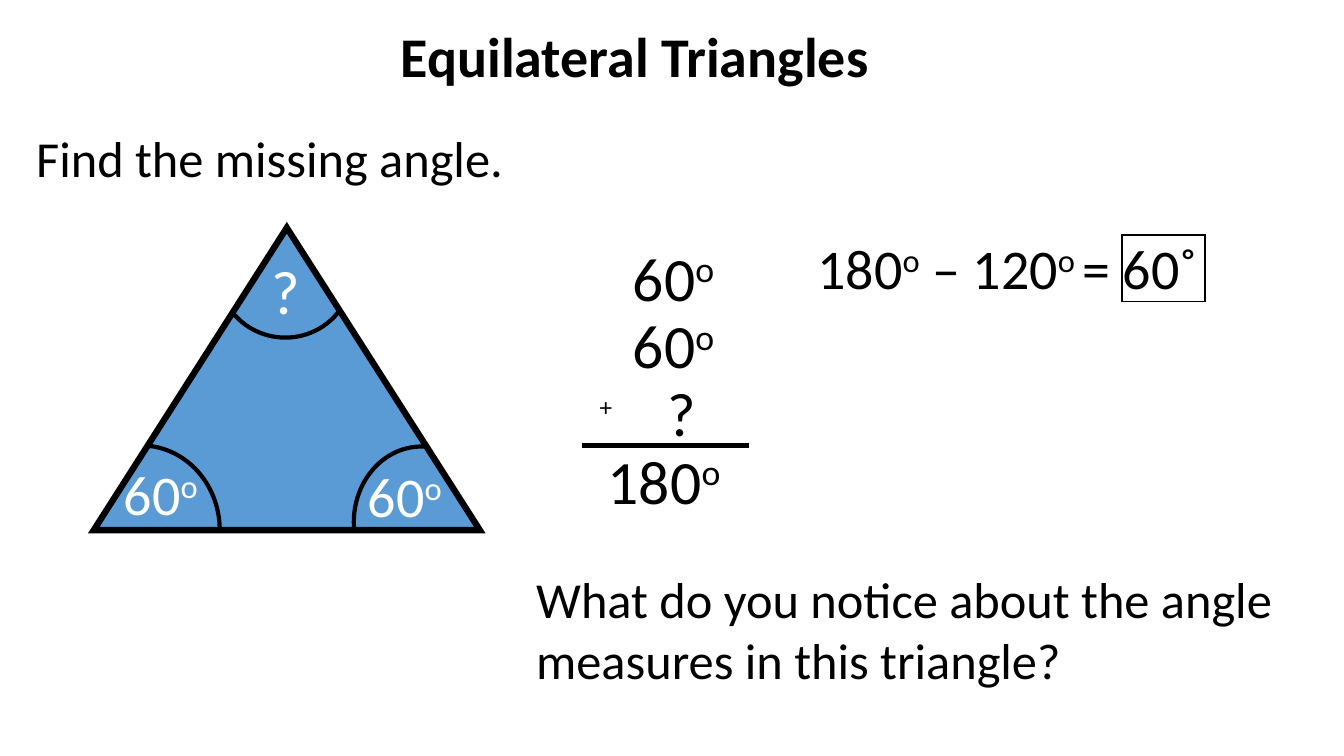
from math import cos, radians, sin

from lxml import etree
from pptx import Presentation
from pptx.dml.color import RGBColor
from pptx.enum.shapes import MSO_CONNECTOR as Connector, MSO_SHAPE as Shape
from pptx.enum.text import MSO_ANCHOR as Anchor, PP_ALIGN as Align
from pptx.oxml.ns import qn
from pptx.util import Inches, Pt

BLACK = RGBColor(0x00, 0x00, 0x00)
WHITE = RGBColor(0xFF, 0xFF, 0xFF)
BLUE = RGBColor(0x5B, 0x9B, 0xD5)
FONT = "Calibri"
DEGREE = ("o", True)
ARC_STEPS = 40


def add_run(paragraph, text, size, color=BLACK, bold=False, raised=False):
    run = paragraph.add_run()
    run.text = text
    run.font.name = FONT
    run.font.size = Pt(size)
    run.font.bold = bold
    run.font.color.rgb = color
    if raised:
        run._r.get_or_add_rPr().set("baseline", "30000")


def add_text(slide, box, size, *parts, color=BLACK, align=Align.LEFT, wrap=True):
    """Add a text box; each part is a (text, raised) pair."""
    text_box = slide.shapes.add_textbox(*map(Inches, box))
    text_box.text_frame.word_wrap = wrap
    paragraph = text_box.text_frame.paragraphs[0]
    paragraph.alignment = align
    for text, raised in parts:
        add_run(paragraph, text, size, color, raised=raised)


def format_outline(shape, width, fill=None):
    shape.shadow.inherit = False
    if fill is None:
        shape.fill.background()
    else:
        shape.fill.solid()
        shape.fill.fore_color.rgb = fill
    shape.line.color.rgb = BLACK
    shape.line.width = Pt(width)
    miter = etree.SubElement(shape.line._get_or_add_ln(), qn("a:miter"))
    miter.set("lim", "800000")


def add_outlined(slide, kind, box, width, fill=None):
    shape = slide.shapes.add_shape(kind, *map(Inches, box))
    format_outline(shape, width, fill)


def add_angle_arc(slide, center, radii, start, end):
    """Draw a clockwise arc; angles are in degrees from the right."""
    (x, y), (rx, ry) = center, radii
    angles = [radians(start + (end - start) * step / ARC_STEPS)
              for step in range(ARC_STEPS + 1)]
    points = [(Inches(x + rx * cos(angle)), Inches(y + ry * sin(angle)))
              for angle in angles]
    builder = slide.shapes.build_freeform(*points[0])
    builder.add_line_segments(points[1:], close=False)
    format_outline(builder.convert_to_shape(), 3)


def add_sum_line(slide, left, right, y):
    line = slide.shapes.add_connector(
        Connector.STRAIGHT, Inches(left), Inches(y), Inches(right), Inches(y))
    line.line.color.rgb = BLACK
    line.line.width = Pt(3)
    etree.SubElement(line._element.spPr, qn("a:effectLst"))


def format_title(slide):
    title = slide.shapes.title
    title.left, title.top, title.width, title.height = map(
        Inches, (1.67, 0, 9.25, 1.17))
    title.text_frame.vertical_anchor = Anchor.MIDDLE
    paragraph = title.text_frame.paragraphs[0]
    paragraph.alignment = Align.CENTER
    paragraph.line_spacing = 0.9
    add_run(paragraph, "Equilateral Triangles", 40, bold=True)


def add_triangle(slide):
    add_outlined(slide, Shape.ISOSCELES_TRIANGLE, (0.93, 2.26, 3.83, 3), 4.5, BLUE)
    add_angle_arc(slide, (1.4, 5.26), (0.78, 0.84), 276, 360)
    add_angle_arc(slide, (4.18, 5.18), (0.67, 0.75), 175, 275)
    add_angle_arc(slide, (2.83, 2.71), (0.66, 0.64), 34, 143)
    for left, top in ((1.13, 4.51), (3.55, 4.53)):
        add_text(slide, (left, top, 1.15, 0.77), 40, ("60", False), DEGREE,
                 color=WHITE)
    add_text(slide, (2.59, 2.46, 1, 0.83), 44, ("?", False), color=WHITE)


def add_angle_sum(slide):
    rows = (
        (6.18, 1.04, ("60", False), DEGREE),
        (6.18, 1.04, ("60", False), DEGREE),
        (6.52, 0.49, ("?", False)),
        (5.93, 1.36, ("180", False), DEGREE),
    )
    for index, (left, width, *parts) in enumerate(rows):
        add_text(slide, (left, 2.33 + index * 0.67, width, 0.84), 44, *parts,
                 wrap=False)
    add_text(slide, (5.85, 3.83, 0.33, 0.4), 18, ("+", False), wrap=False)
    add_sum_line(slide, 5.77, 7.43, 4.42)


def main():
    presentation = Presentation()
    presentation.slide_width = Inches(13.33)
    presentation.slide_height = Inches(7.5)
    slide = presentation.slides.add_slide(presentation.slide_layouts[5])

    # Title and task
    format_title(slide)
    add_text(slide, (-1.22, 1.21, 7.79, 0.71), 36,
             ("Find the missing angle.", False), align=Align.CENTER)

    # Triangle and the sum of its angles
    add_triangle(slide)
    add_angle_sum(slide)

    # Boxed answer
    add_text(slide, (8.01, 2.27, 4.98, 0.77), 40, ("180", False), DEGREE,
             (" – 120", False), ("o ", True), ("= 60˚", False))
    add_outlined(slide, Shape.RECTANGLE, (11.13, 2.33, 0.82, 0.66), 1)

    # Closing question
    add_text(slide, (5.22, 5.59, 7.76, 1.31), 36,
             ("What do you notice about the angle measures in this triangle?", False))

    presentation.save("out.pptx")


if __name__ == "__main__":
    main()
